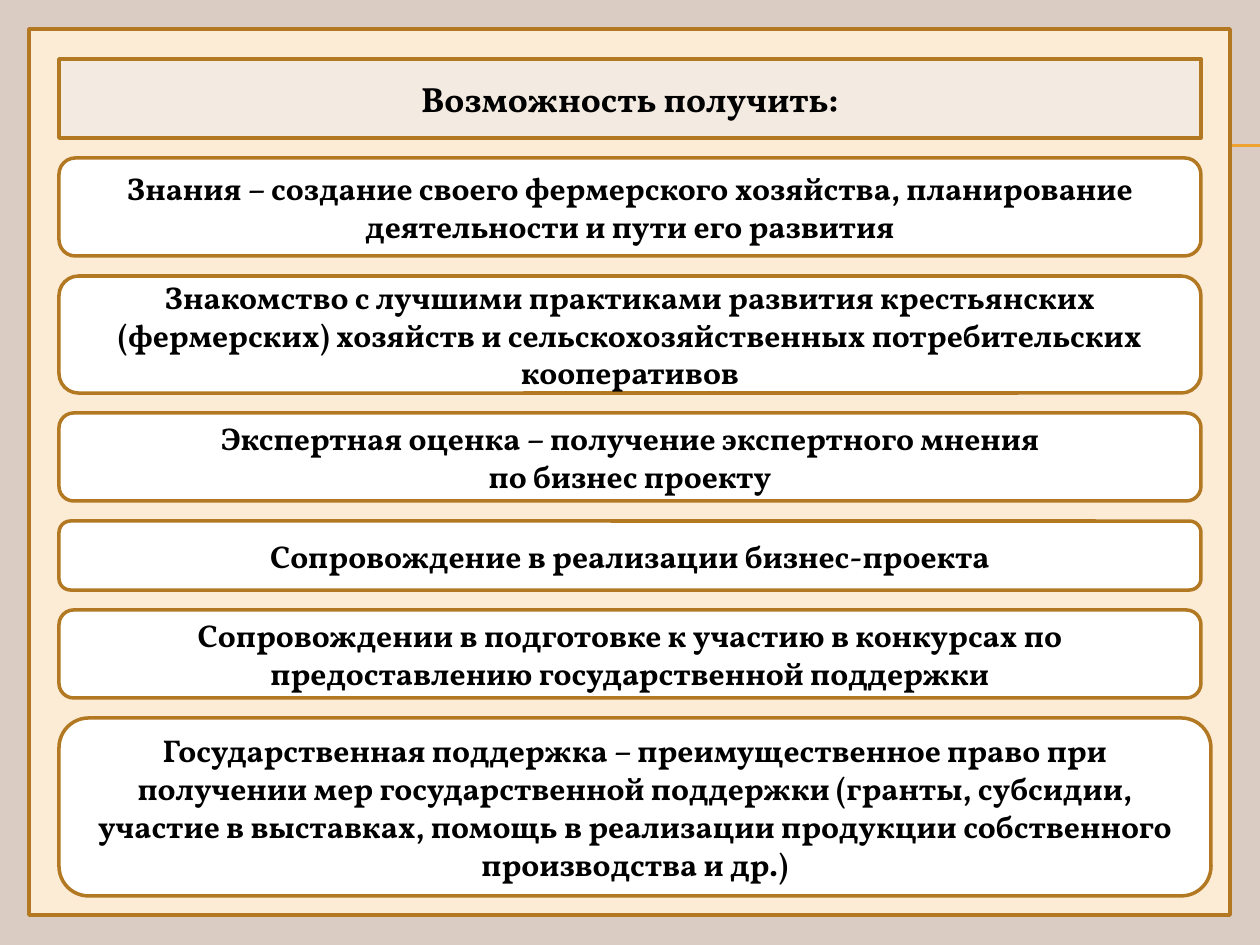
from lxml import etree
from pptx import Presentation
from pptx.dml.color import RGBColor
from pptx.enum.shapes import MSO_CONNECTOR, MSO_SHAPE
from pptx.enum.text import MSO_ANCHOR, MSO_AUTO_SIZE, PP_ALIGN
from pptx.oxml import parse_xml
from pptx.oxml.ns import nsdecls, qn
from pptx.util import Pt

BACK = RGBColor(0xDA, 0xCB, 0xC3)
CREAM = RGBColor(0xFC, 0xEC, 0xD5)
SAND = RGBColor(0xF3, 0xEA, 0xE2)
WHITE = RGBColor(0xFF, 0xFF, 0xFF)
BLACK = RGBColor(0, 0, 0)
BROWN = RGBColor(0xB2, 0x78, 0x22)
GOLD = RGBColor(0xF0, 0xA2, 0x2E)

RECT = MSO_SHAPE.RECTANGLE
ROUND = MSO_SHAPE.ROUNDED_RECTANGLE
LINE = MSO_CONNECTOR.STRAIGHT
CENTER = PP_ALIGN.CENTER
MIDDLE = MSO_ANCHOR.MIDDLE
FIXED = MSO_AUTO_SIZE.NONE

SCALE = 914400 / 126
LEFT, TOP, WIDTH, GAP = 59, 59, 1142, 20
HEAD = 79
ROWS = [
    (98, WIDTH, ["Знания – создание своего фермерского хозяйства, планирование "
                 "деятельности и пути его развития"]),
    (117, WIDTH, ["Знакомство с лучшими практиками развития крестьянских "
                  "(фермерских) хозяйств и сельскохозяйственных "
                  "потребительских кооперативов"]),
    (88, WIDTH, ["Экспертная оценка – получение экспертного мнения",
                 "по бизнес проекту"]),
    (69, WIDTH, ["Сопровождение в реализации бизнес-проекта"]),
    (88, WIDTH, ["Сопровождении в подготовке к участию в конкурсах по "
                 "предоставлению государственной поддержки"]),
    (178, 1152, ["Государственная поддержка – преимущественное право при "
                 "получении мер государственной поддержки (гранты, субсидии, "
                 "участие в выставках, помощь в реализации продукции "
                 "собственного производства и др.)"]),
]


def px(*sizes):
    return [round(size * SCALE) for size in sizes]


class Deck:
    font = "Vollkorn"

    def __init__(self, width, height):
        self.file = Presentation()
        self.file.slide_width, self.file.slide_height = px(width, height)
        self.slide = self.file.slides.add_slide(self.file.slide_layouts[5])
        fill = self.slide.background.fill
        fill.solid()
        fill.fore_color.rgb = BACK

    def rule(self, left, right, y):
        line = self.slide.shapes.add_connector(LINE, *px(left, y, right, y))
        line.line.color.rgb = GOLD
        line.line.width = Pt(0.75)
        etree.SubElement(line._element.spPr, qn("a:effectLst"))

    def paint(self, shape, fill):
        shape.fill.solid()
        shape.fill.fore_color.rgb = fill
        shape.line.color.rgb = BROWN
        shape.line.width = Pt(2)

    def label(self, shape, lines, size):
        frame = shape.text_frame
        frame.text = "\n".join(lines)
        frame.word_wrap = True
        frame.auto_size = FIXED
        frame.vertical_anchor = MIDDLE
        for para in frame.paragraphs:
            para.alignment = CENTER
            para.font.name = self.font
            para.font.size = Pt(size)
            para.font.bold = True
            para.font.color.rgb = BLACK

    def box(self, kind, left, top, width, height, fill):
        shape = self.slide.shapes.add_shape(kind, *px(left, top, width, height))
        shape.shadow.inherit = False
        self.paint(shape, fill)
        return shape

    def title(self, text, left, top, width, height):
        shape = self.slide.shapes.title
        shape.left, shape.top, shape.width, shape.height = px(
            left, top, width, height)
        shape._element.spPr.append(parse_xml(
            f'<a:prstGeom {nsdecls("a")} prst="roundRect"><a:avLst/></a:prstGeom>'))
        self.paint(shape, SAND)
        self.label(shape, [text], 20)
        self.slide.shapes._spTree.append(shape._element)

    def card(self, lines, left, top, width, height):
        shape = self.box(ROUND, left, top, width, height, WHITE)
        self.label(shape, lines, 18)


def main():
    deck = Deck(1260, 945)
    for y in (145, 146):
        deck.rule(71, 1260, y)
    deck.box(RECT, 29, 29, 1201, 886, CREAM)
    deck.title("Возможность получить:", LEFT, TOP, WIDTH, HEAD)
    top = TOP + HEAD + GAP
    for height, width, lines in ROWS:
        deck.card(lines, LEFT, top, width, height)
        top += height + GAP
    deck.file.save("out.pptx")


if __name__ == "__main__":
    main()
